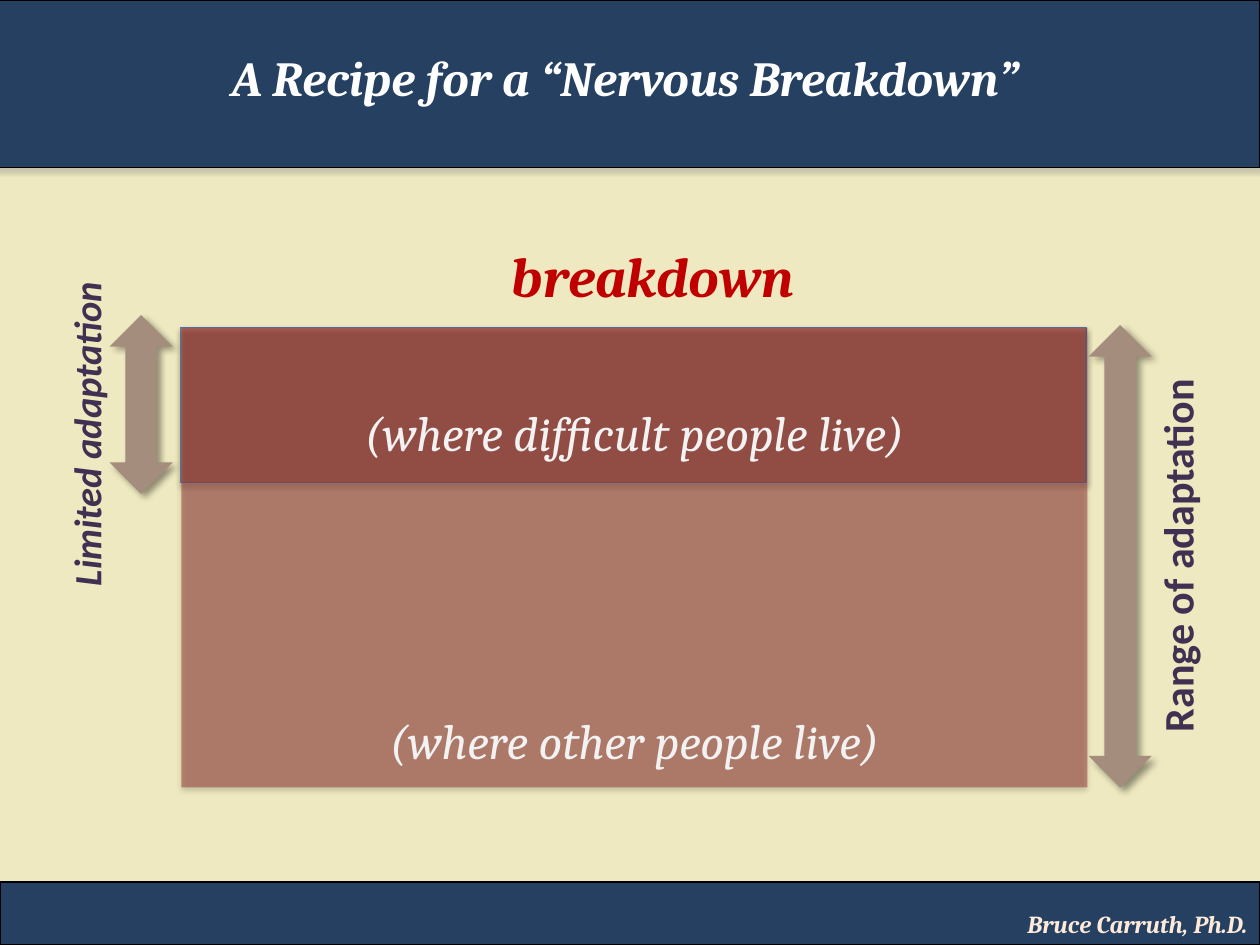
from lxml.etree import SubElement
from pptx import Presentation
from pptx.dml.color import RGBColor
from pptx.enum.shapes import MSO_SHAPE
from pptx.enum.text import MSO_ANCHOR, MSO_AUTO_SIZE, PP_ALIGN
from pptx.oxml.ns import qn
from pptx.util import Inches, Pt

NAVY = RGBColor(0x25, 0x40, 0x61)
CREAM = RGBColor(0xEE, 0xE9, 0xC0)
BLACK = RGBColor(0x00, 0x00, 0x00)
GRAY = RGBColor(0x80, 0x80, 0x80)
WHITE = RGBColor(0xFF, 0xFF, 0xFF)
OFF_WHITE = RGBColor(0xF2, 0xF2, 0xF2)
PEACH = RGBColor(0xFD, 0xEA, 0xDA)
RED = RGBColor(0xC0, 0x00, 0x00)
BRICK = RGBColor(0x95, 0x37, 0x35)
BLUE = RGBColor(0x4B, 0x7E, 0xBC)
TAUPE = RGBColor(0xA4, 0x8D, 0x7C)
PURPLE = RGBColor(0x40, 0x31, 0x52)

# Shadows: colour, opacity %, blur pt, distance pt, direction in degrees
BAR_SHADOW = (GRAY, 35, 3.1, 1.8, 90)
ZONE_SHADOW = (BLACK, 35, 3.1, 1.8, 90)
ARROW_SHADOW = (BLACK, 40, 4, 3, 45)


class SlideBuilder:
    def __init__(self, slide, font="Cambria"):
        self.slide = slide
        self.font = font

    def background(self, color):
        fill = self.slide.background.fill
        fill.solid()
        fill.fore_color.rgb = color

    def shadow(self, sp, color, opacity, blur, dist, angle):
        sp.shadow.inherit = False
        effects = sp._element.spPr.find(qn("a:effectLst"))
        outer = SubElement(effects, qn("a:outerShdw"), blurRad=str(Pt(blur)),
                           dist=str(Pt(dist)), dir=str(angle * 60000),
                           rotWithShape="0")
        clr = SubElement(outer, qn("a:srgbClr"), val=str(color))
        SubElement(clr, qn("a:alpha"), val=str(opacity * 1000))

    def shape(self, kind, box, color, shadow, line=None, opacity=None):
        sp = self.slide.shapes.add_shape(kind, *map(Inches, box))
        sp.fill.solid()
        sp.fill.fore_color.rgb = color
        if opacity:
            clr = sp._element.spPr.find(qn("a:solidFill"))[0]
            SubElement(clr, qn("a:alpha"), val=str(opacity * 1000))
        if line is None:
            sp.line.fill.background()
        else:
            sp.line.color.rgb = line
            sp.line.width = Pt(0.75)
        self.shadow(sp, *shadow)
        return sp

    def add_run(self, tf, text, size, color, align=PP_ALIGN.CENTER,
                spacing=None, **formats):
        tf.word_wrap = True
        p = tf.paragraphs[0]
        p.alignment = align
        if spacing:
            p.line_spacing = Pt(spacing)
        r = p.add_run()
        r.text = text
        r.font.color.rgb = color
        style = {"name": self.font, "size": Pt(size), "italic": True}
        for name, value in (style | formats).items():
            setattr(r.font, name, value)

    def text(self, box, text, size, color, rotation=0, grow=True, **formats):
        sp = self.slide.shapes.add_textbox(*map(Inches, box))
        sp.rotation = rotation
        self.add_run(sp.text_frame, text, size, color, **formats)
        if grow:
            sp.text_frame.auto_size = MSO_AUTO_SIZE.SHAPE_TO_FIT_TEXT

    def side_label(self, box, text, size, **formats):
        self.text(box, text, size, PURPLE, rotation=270, align=PP_ALIGN.LEFT,
                  name="Calibri", bold=True, **formats)


def main():
    prs = Presentation()
    prs.slide_width, prs.slide_height = Inches(10), Inches(7.5)
    s = SlideBuilder(prs.slides.add_slide(prs.slide_layouts[6]))
    s.background(CREAM)

    # Footer and title bars
    footer = s.shape(MSO_SHAPE.RECTANGLE, (0, 7, 10, 0.5), NAVY, BAR_SHADOW,
                     BLACK)
    footer.text_frame.vertical_anchor = MSO_ANCHOR.BOTTOM
    s.add_run(footer.text_frame, "Bruce Carruth, Ph.D.", 14, PEACH,
              PP_ALIGN.RIGHT, bold=True)
    s.shape(MSO_SHAPE.RECTANGLE, (-0.03, 0, 10.03, 1.33), NAVY, BAR_SHADOW,
            BLACK)
    s.text((0.5, 0.33, 8.92, 0.67), "A Recipe for a “Nervous Breakdown”", 28,
           WHITE, grow=False, bold=True)

    # Limited range inside the full range
    s.text((1.75, 2, 6.87, 0.52), "breakdown", 32, RED, spacing=29, bold=True)
    for box, line in (((1.43, 2.6, 7.19, 1.23), BLUE),
                      ((1.44, 2.6, 7.19, 3.65), None)):
        s.shape(MSO_SHAPE.RECTANGLE, box, BRICK, ZONE_SHADOW, line, opacity=51)
    for top, who in ((3.21, "difficult"), (5.65, "other")):
        s.text((1.6, top, 6.87, 0.52), f"(where {who} people live)", 28,
               OFF_WHITE, spacing=29)

    # Range arrows and their labels
    for box in ((0.87, 2.5, 0.5, 1.42), (8.64, 2.58, 0.5, 3.67)):
        s.shape(MSO_SHAPE.UP_DOWN_ARROW, box, TAUPE, ARROW_SHADOW)
    s.side_label((-0.69, 3.14, 2.75, 0.47), "Limited adaptation", 22)
    s.side_label((7.72, 4.04, 3.24, 0.5), "Range of adaptation", 24,
                 italic=False)

    prs.save("out.pptx")


if __name__ == "__main__":
    main()
